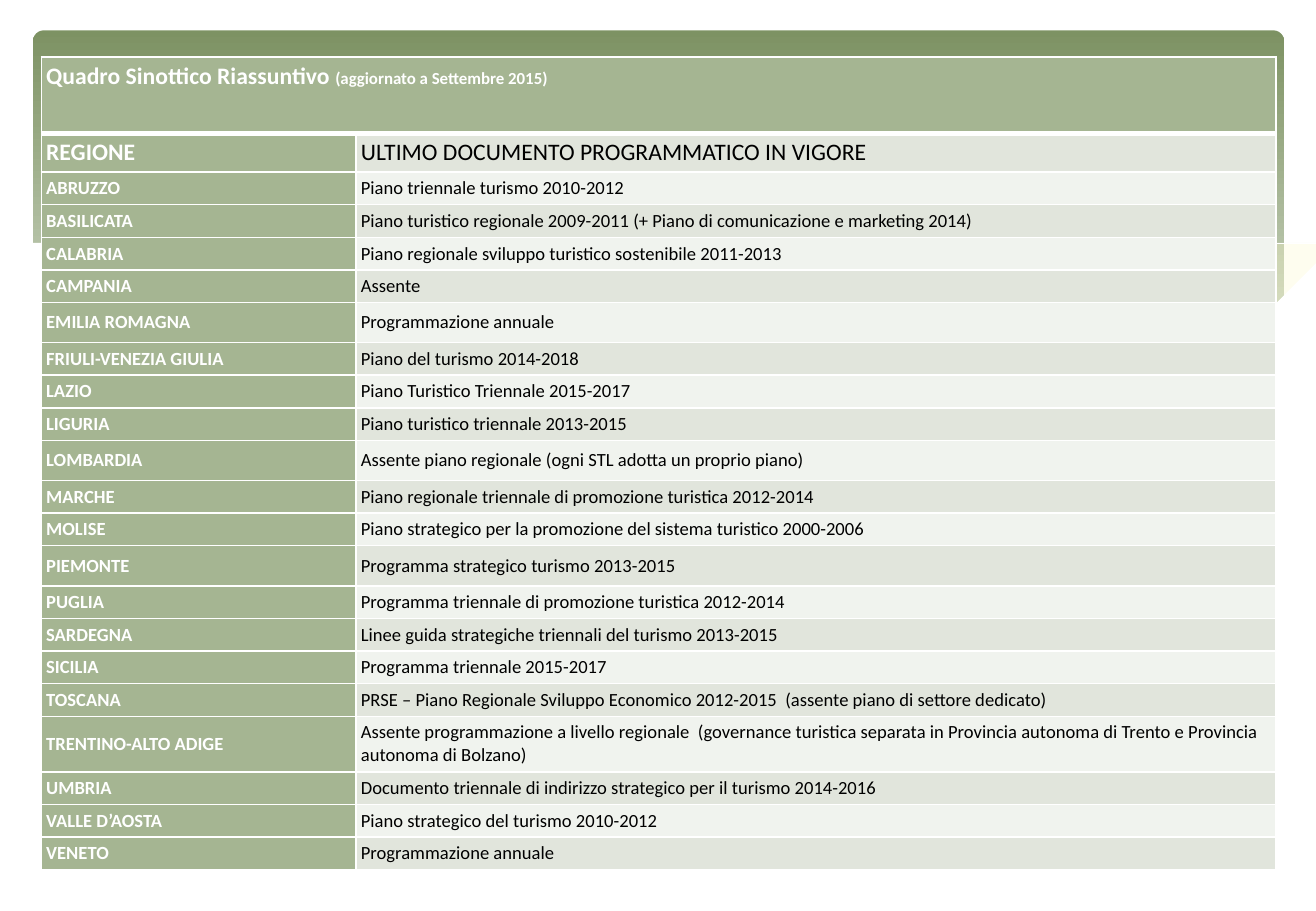
from lxml import etree
from pptx import Presentation
from pptx.dml.color import RGBColor
from pptx.enum import shapes, text
from pptx.oxml.ns import qn
from pptx.util import Inches, Pt

# Content
TITLE = [("Quadro Sinottico Riassuntivo ", 14), ("(aggiornato a Settembre 2015)", 10)]
ROWS = [
    ("REGIONE", "ULTIMO DOCUMENTO PROGRAMMATICO IN VIGORE"),
    ("ABRUZZO", "Piano triennale turismo 2010-2012"),
    ("BASILICATA", "Piano turistico regionale 2009-2011 (+ Piano di comunicazione e marketing 2014)"),
    ("CALABRIA", "Piano regionale sviluppo turistico sostenibile 2011-2013"),
    ("CAMPANIA", "Assente"),
    ("EMILIA ROMAGNA", "Programmazione annuale"),
    ("FRIULI-VENEZIA GIULIA", "Piano del turismo 2014-2018"),
    ("LAZIO", "Piano Turistico Triennale 2015-2017"),
    ("LIGURIA", "Piano turistico triennale 2013-2015"),
    ("LOMBARDIA", "Assente piano regionale (ogni STL adotta un proprio piano)"),
    ("MARCHE", "Piano regionale triennale di promozione turistica 2012-2014"),
    ("MOLISE", "Piano strategico per la promozione del sistema turistico 2000-2006"),
    ("PIEMONTE", "Programma strategico turismo 2013-2015"),
    ("PUGLIA", "Programma triennale di promozione turistica 2012-2014"),
    ("SARDEGNA", "Linee guida strategiche triennali del turismo 2013-2015"),
    ("SICILIA", "Programma triennale 2015-2017"),
    ("TOSCANA", "PRSE – Piano Regionale Sviluppo Economico 2012-2015  (assente piano di settore dedicato)"),
    ("TRENTINO-ALTO ADIGE", "Assente programmazione a livello regionale  (governance turistica separata "
                            "in Provincia autonoma di Trento e Provincia autonoma di Bolzano)"),
    ("UMBRIA", "Documento triennale di indirizzo strategico per il turismo 2014-2016"),
    ("VALLE D’AOSTA", "Piano strategico del turismo 2010-2012"),
    ("VENETO", "Programmazione annuale"),
]
TALL = {"EMILIA ROMAGNA", "LOMBARDIA", "PIEMONTE"}
TITLE_H, ROW_H, TALL_H = 0.63, 0.23, 0.33
COLS = (2.59, 7.57)
GREEN, BANDS = "A5B592", ("E1E5DC", "F0F3EE")
WHITE, BLACK, CREAM = "FFFFFF", "000000", "FEFAC9"

# Waves behind the table: points, fill, opacity in percent (no fill means an open line)
WAVES = [
    ([(10.57, 2), (10.28, 2.04), (9.82, 2.13), (9.32, 2.23), (8.44, 2.42), (7.65, 2.57),
      (7.16, 2.65), (7.78, 2.72), (8.33, 2.77), (8.82, 2.78), (9.35, 2.75), (9.81, 2.69),
      (10.21, 2.59), (10.57, 2.47)], CREAM, 29),
    ([(9.67, 2.73), (9.07, 2.65), (8.4, 2.54), (7.65, 2.4), (6.81, 2.22), (6.16, 2.08),
      (5.57, 1.98), (5.03, 1.91), (4.55, 1.87), (3.91, 1.85), (3.39, 1.88), (3.1, 1.91),
      (3.71, 1.99), (4.38, 2.11), (4.87, 2.22), (5.74, 2.4), (6.51, 2.55), (7.21, 2.66),
      (7.83, 2.74), (8.37, 2.77), (8.86, 2.78), (9.29, 2.77)], CREAM, 40),
    ([(3.35, 1.95), (3.72, 1.9), (4.2, 1.87), (4.69, 1.87), (5.3, 1.9), (6.03, 1.97),
      (6.89, 2.08), (7.88, 2.26), (9, 2.51), (9.83, 2.72)], None, 100),
    ([(6.65, 2.57), (7.28, 2.41), (8.1, 2.23), (9.06, 2.04), (9.7, 1.94), (10.16, 1.88),
      (10.56, 1.85)], None, 100),
    ([(10.59, 2.46), (10.29, 2.56), (9.85, 2.67), (9.35, 2.74), (8.76, 2.77), (8.06, 2.74),
      (7.24, 2.65), (6.28, 2.5), (5.45, 2.33), (4.53, 2.13), (3.68, 1.97), (2.93, 1.88),
      (2.29, 1.84), (1.74, 1.84), (1.29, 1.87), (0.82, 1.95), (0.5, 2.03), (0.25, 2.13),
      (0.25, 3.29), (10.59, 3.29)], WHITE, 100),
]


def rgb(color):
    return RGBColor.from_string(color)


def add_wave(s, points, color, opacity):
    fb = s.shapes.build_freeform(*points[0], scale=Inches(1))
    fb.add_line_segments(points[1:], close=color is not None)
    sp = fb.convert_to_shape()
    sp.shadow.inherit = False
    if color is None:
        sp.fill.background()
        sp.line.color.rgb = rgb(WHITE)
        sp.line.width = Pt(0.25)
        return
    sp.fill.solid()
    sp.fill.fore_color.rgb = rgb(color)
    sp.line.fill.background()
    if opacity < 100:
        clr = sp.fill._xPr.find(".//" + qn("a:srgbClr"))
        etree.SubElement(clr, qn("a:alpha"), val=str(opacity * 1000))


def style_cell(cell, fill, bottom=1):
    tc_pr = cell._tc.get_or_add_tcPr()
    for side, width in (("L", 1), ("R", 1), ("T", 1), ("B", bottom)):
        ln = etree.SubElement(tc_pr, qn("a:ln" + side), w=str(Pt(width)))
        solid = etree.SubElement(ln, qn("a:solidFill"))
        etree.SubElement(solid, qn("a:srgbClr"), val=WHITE)
    cell.fill.solid()
    cell.fill.fore_color.rgb = rgb(fill)
    cell.margin_left = cell.margin_right = Inches(0.04)
    cell.margin_top = cell.margin_bottom = Inches(0.04)
    cell.vertical_anchor = text.MSO_ANCHOR.MIDDLE


def write(cell, runs, color, bold):
    p = cell.text_frame.paragraphs[0]
    p.space_after = Pt(10)
    p.font.name, p.font.bold = "Calibri", bold
    p.font.color.rgb = rgb(color)
    for words, size in runs:
        r = p.add_run()
        r.text = words
        r.font.name, r.font.size, r.font.bold = "Calibri", Pt(size), bold
        r.font.color.rgb = rgb(color)


prs = Presentation()
prs.slide_width, prs.slide_height = Inches(10.83), Inches(7.5)
s = prs.slides.add_slide(prs.slide_layouts[6])

# Green gradient panel
panel = s.shapes.add_shape(shapes.MSO_SHAPE.ROUNDED_RECTANGLE,
                           Inches(0.27), Inches(0.25), Inches(10.3), Inches(2.7))
panel.adjustments[0] = 0.034
panel.shadow.inherit = False
panel.line.fill.background()
panel.fill.gradient()
panel.fill.gradient_angle = 270
for stop, (color, position) in zip(panel.fill.gradient_stops, (("7D9263", 0), ("C9D3BE", 0.9))):
    stop.color.rgb = rgb(color)
    stop.position = position

for wave in WAVES:
    add_wave(s, *wave)

# Table of regions
heights = [TITLE_H] + [TALL_H if name in TALL else ROW_H for name, _ in ROWS]
table = s.shapes.add_table(len(heights), 2, Inches(0.34), Inches(0.47),
                           Inches(sum(COLS)), Inches(sum(heights))).table
table.first_row = table.horz_banding = False
for column, width in zip(table.columns, COLS):
    column.width = Inches(width)
for row, height in zip(table.rows, heights):
    row.height = Inches(height)

title = table.cell(0, 0)
title.merge(table.cell(0, 1))
for cell in table.rows[0].cells:
    style_cell(cell, GREEN, bottom=3)
write(title, TITLE, WHITE, True)
title.vertical_anchor = text.MSO_ANCHOR.TOP

for i, (region, plan) in enumerate(ROWS):
    size = 11 if i else 14
    for j, (words, fill, color) in enumerate(((region, GREEN, WHITE), (plan, BANDS[i % 2], BLACK))):
        cell = table.cell(i + 1, j)
        style_cell(cell, fill)
        write(cell, [(words, size)], color, j == 0)

prs.save("out.pptx")
